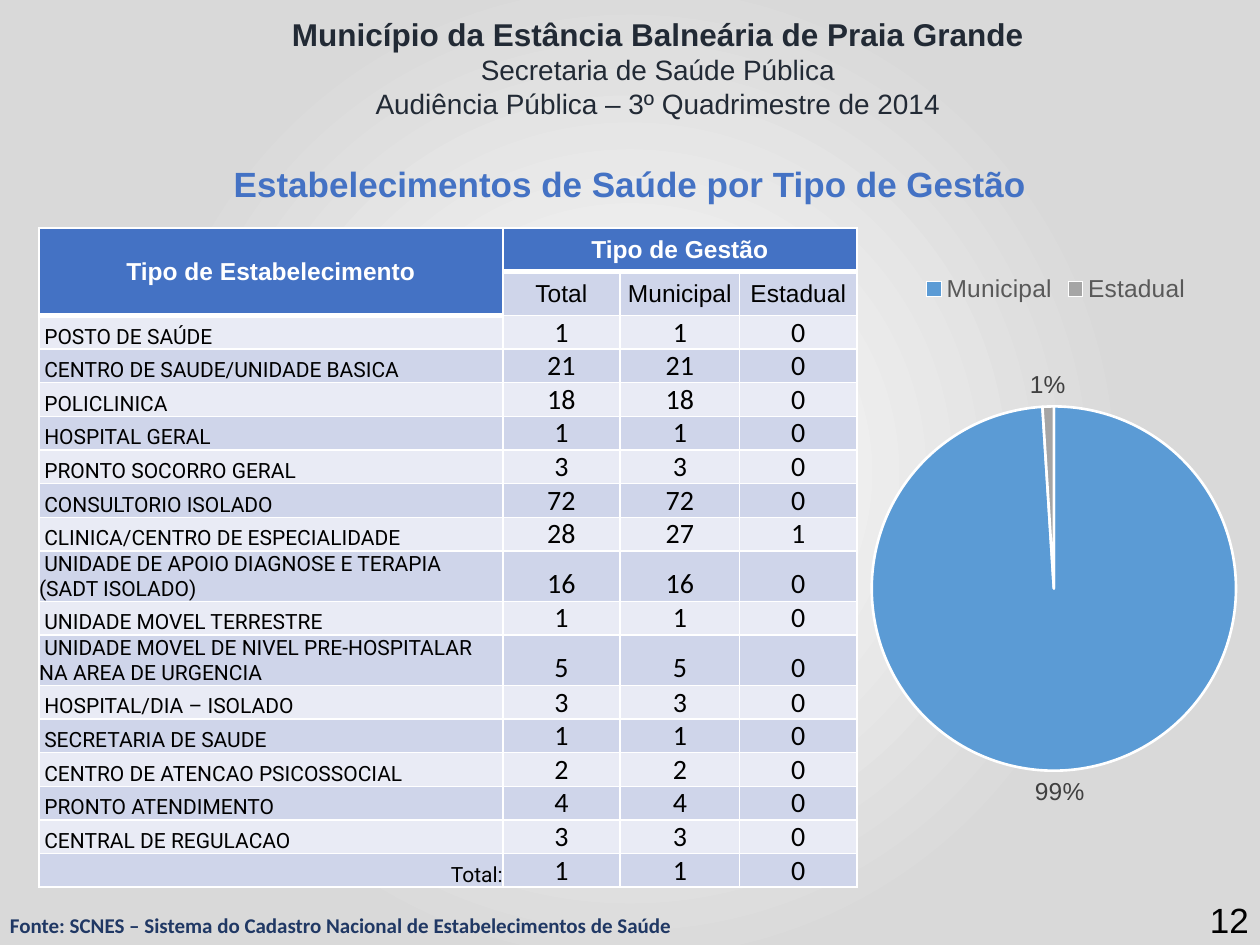
from lxml import etree
from pptx import Presentation, oxml
from pptx import util as u
from pptx.chart import data as chart_data
from pptx.dml import color as dml
from pptx.enum import chart as charts, text
from pptx.oxml import ns

LEFT, CENTER, RIGHT = text.PP_ALIGN.LEFT, text.PP_ALIGN.CENTER, text.PP_ALIGN.RIGHT
TOP, MIDDLE, BOTTOM = text.MSO_ANCHOR.TOP, text.MSO_ANCHOR.MIDDLE, text.MSO_ANCHOR.BOTTOM


def rgb(value):
    return dml.RGBColor.from_string(value)


def write(paragraph, words, size, name, value, bold=False, alignment=CENTER):
    paragraph.alignment = alignment
    run = paragraph.add_run()
    run.text = words
    run.font.size = u.Pt(size)
    run.font.name = name
    run.font.bold = bold
    run.font.color.rgb = rgb(value)


presentation = Presentation()
presentation.slide_width, presentation.slide_height = u.Pt(720), u.Pt(540)
slide = presentation.slides.add_slide(presentation.slide_layouts[5])

slide.background.fill.gradient()
gradient = slide.element.find(".//" + ns.qn("a:gradFill"))
stops = "".join(
    f'<a:gs pos="{position * 1000}"><a:srgbClr val="{value}"/></a:gs>'
    for position, value in [(0, "FFFFFF"), (65, "D9D9D9"), (97, "D9D9D9")])
gradient.getparent().replace(gradient, oxml.parse_xml(
    f'<a:gradFill {ns.nsdecls("a")} rotWithShape="1"><a:gsLst>{stops}</a:gsLst>'
    '<a:path path="circle"><a:fillToRect l="50000" t="50000" r="50000" b="50000"/></a:path>'
    '</a:gradFill>'))

title = slide.shapes.title
title.left, title.top, title.width, title.height = u.Pt(0), u.Pt(89.3), u.Pt(720), u.Pt(31.5)
title.text_frame.vertical_anchor = TOP
write(title.text_frame.paragraphs[0], "Estabelecimentos de Saúde por Tipo de Gestão",
      20, "Arial", "4472C4", True)

header = slide.shapes.add_textbox(u.Pt(81.4), u.Pt(5), u.Pt(589), u.Pt(67.7)).text_frame
header.word_wrap = True
header_lines = [
    ("Município da Estância Balneária de Praia Grande", 18, True),
    ("Secretaria de Saúde Pública", 16, False),
    ("Audiência Pública – 3º Quadrimestre de 2014", 16, False),
]
for index, (words, size, bold) in enumerate(header_lines):
    paragraph = header.add_paragraph() if index else header.paragraphs[0]
    write(paragraph, words, size, "Arial", "222A35", bold)

establishments = [
    ("POSTO DE SAÚDE", 1, 1, 0),
    ("CENTRO DE SAUDE/UNIDADE BASICA", 21, 21, 0),
    ("POLICLINICA", 18, 18, 0),
    ("HOSPITAL GERAL", 1, 1, 0),
    ("PRONTO SOCORRO GERAL", 3, 3, 0),
    ("CONSULTORIO ISOLADO", 72, 72, 0),
    ("CLINICA/CENTRO DE ESPECIALIDADE", 28, 27, 1),
    ("UNIDADE DE APOIO DIAGNOSE E TERAPIA (SADT ISOLADO)", 16, 16, 0),
    ("UNIDADE MOVEL TERRESTRE", 1, 1, 0),
    ("UNIDADE MOVEL DE NIVEL PRE-HOSPITALAR\nNA AREA DE URGENCIA", 5, 5, 0),
    ("HOSPITAL/DIA – ISOLADO", 3, 3, 0),
    ("SECRETARIA DE SAUDE", 1, 1, 0),
    ("CENTRO DE ATENCAO PSICOSSOCIAL", 2, 2, 0),
    ("PRONTO ATENDIMENTO", 4, 4, 0),
    ("CENTRAL DE REGULACAO", 3, 3, 0),
    ("Total:", 1, 1, 0),
]
rows = [("Tipo de Estabelecimento", "Tipo de Gestão", "", ""),
        ("", "Total", "Municipal", "Estadual")] + establishments
table = slide.shapes.add_table(len(rows), 4, u.Pt(22.3), u.Pt(130.3),
                               u.Pt(467.4), u.Pt(376)).table
table.first_row = table.horz_banding = False
for column, width in zip(table.columns, [265, 67, 68.4, 67]):
    column.width = u.Pt(width)
table.cell(0, 0).merge(table.cell(1, 0))
table.cell(0, 1).merge(table.cell(0, 3))

for row, values in enumerate(rows):
    two_lines = len(str(values[0])) > 40
    table.rows[row].height = u.Pt(25 if row < 2 else 28.8 if two_lines else 19.2)
    for column, value in enumerate(values):
        cell = table.cell(row, column)
        heading = row == 0 or (row == 1 and column == 0)
        inset = 0.7 if row < 2 else 0
        cell.margin_left = cell.margin_right = cell.margin_top = u.Pt(inset)
        cell.margin_bottom = u.Pt(0)
        cell.vertical_anchor = MIDDLE if row < 2 else BOTTOM
        cell.fill.solid()
        cell.fill.fore_color.rgb = rgb("4472C4" if heading else "CFD5EA" if row % 2 else "E9EBF5")
        for position, side in enumerate(["lnL", "lnR", "lnT", "lnB"]):
            width = 3 if heading and side == "lnB" else 1
            cell._tc.get_or_add_tcPr().insert(position, oxml.parse_xml(
                f'<a:{side} {ns.nsdecls("a")} w="{u.Pt(width)}"><a:solidFill>'
                f'<a:srgbClr val="FFFFFF"/></a:solidFill></a:{side}>'))
        if value == "":
            continue
        for index, words in enumerate(str(value).split("\n")):
            frame = cell.text_frame
            paragraph = frame.add_paragraph() if index else frame.paragraphs[0]
            if row < 2:
                write(paragraph, words, 14, "Arial", "FFFFFF" if heading else "000000", heading)
            elif column:
                write(paragraph, words, 16, "Calibri", "000000")
            else:
                is_total = words == "Total:"
                write(paragraph, words, 12, "Roboto", "000000",
                      alignment=RIGHT if is_total else LEFT)
                if not is_total and index == 0:
                    paragraph._p.get_or_add_pPr().set("indent", str(u.Pt(3)))

page_number = slide.shapes.add_textbox(u.Pt(558.7), u.Pt(511.2), u.Pt(162), u.Pt(28.8)).text_frame
page_number.word_wrap = True
page_number.vertical_anchor = MIDDLE
write(page_number.paragraphs[0], "12", 20, "Arial", "000000", alignment=RIGHT)

management = chart_data.CategoryChartData()
management.categories = ["Municipal", "Estadual"]
management.add_series("Series 1", [99, 1])
chart = slide.shapes.add_chart(charts.XL_CHART_TYPE.PIE, u.Pt(488.9), u.Pt(149),
                               u.Pt(229), u.Pt(347), management).chart
chart.has_title = False
chart.font.size = u.Pt(10)
chart.font.name = "Arial"
chart.font.color.rgb = rgb("000000")
chart.has_legend = True
chart.legend.position = charts.XL_LEGEND_POSITION.TOP
chart.legend.include_in_layout = False

plot = chart.plots[0]
plot.vary_by_categories = True
plot.has_data_labels = True
labels = plot.data_labels
labels.show_percentage = True
labels.show_value = False
labels.number_format = "0%"
labels.number_format_is_linked = False
labels.position = charts.XL_LABEL_POSITION.OUTSIDE_END
for font, value in [(chart.legend.font, "595959"), (labels.font, "404040")]:
    font.size = u.Pt(14)
    font.name = "Arial"
    font.color.rgb = rgb(value)
for index, value in enumerate(["5B9BD5", "A5A5A5"]):
    point = plot.series[0].points[index]
    point.format.fill.solid()
    point.format.fill.fore_color.rgb = rgb(value)
    point.format.line.color.rgb = rgb("FFFFFF")
    point.format.line.width = u.Pt(1.5)

plot_area = chart.element.find(".//" + ns.qn("c:plotArea"))
for layout in plot_area.findall(ns.qn("c:layout")):
    plot_area.remove(layout)
layout = etree.Element(ns.qn("c:layout"))
manual = etree.SubElement(layout, ns.qn("c:manualLayout"))
for tag, value in [("layoutTarget", "inner"), ("xMode", "edge"), ("yMode", "edge"),
                   ("x", 0.04), ("y", 0.24), ("w", 0.91), ("h", 0.6)]:
    etree.SubElement(manual, ns.qn("c:" + tag)).set("val", str(value))
plot_area.insert(0, layout)

source = slide.shapes.add_textbox(u.Pt(-1.4), u.Pt(517.7), u.Pt(396.7), u.Pt(21.8)).text_frame
source.word_wrap = False
write(source.paragraphs[0],
      "Fonte: SCNES – Sistema do Cadastro Nacional de Estabelecimentos de Saúde",
      12, "Calibri", "203864", True, LEFT)

presentation.save("out.pptx")
